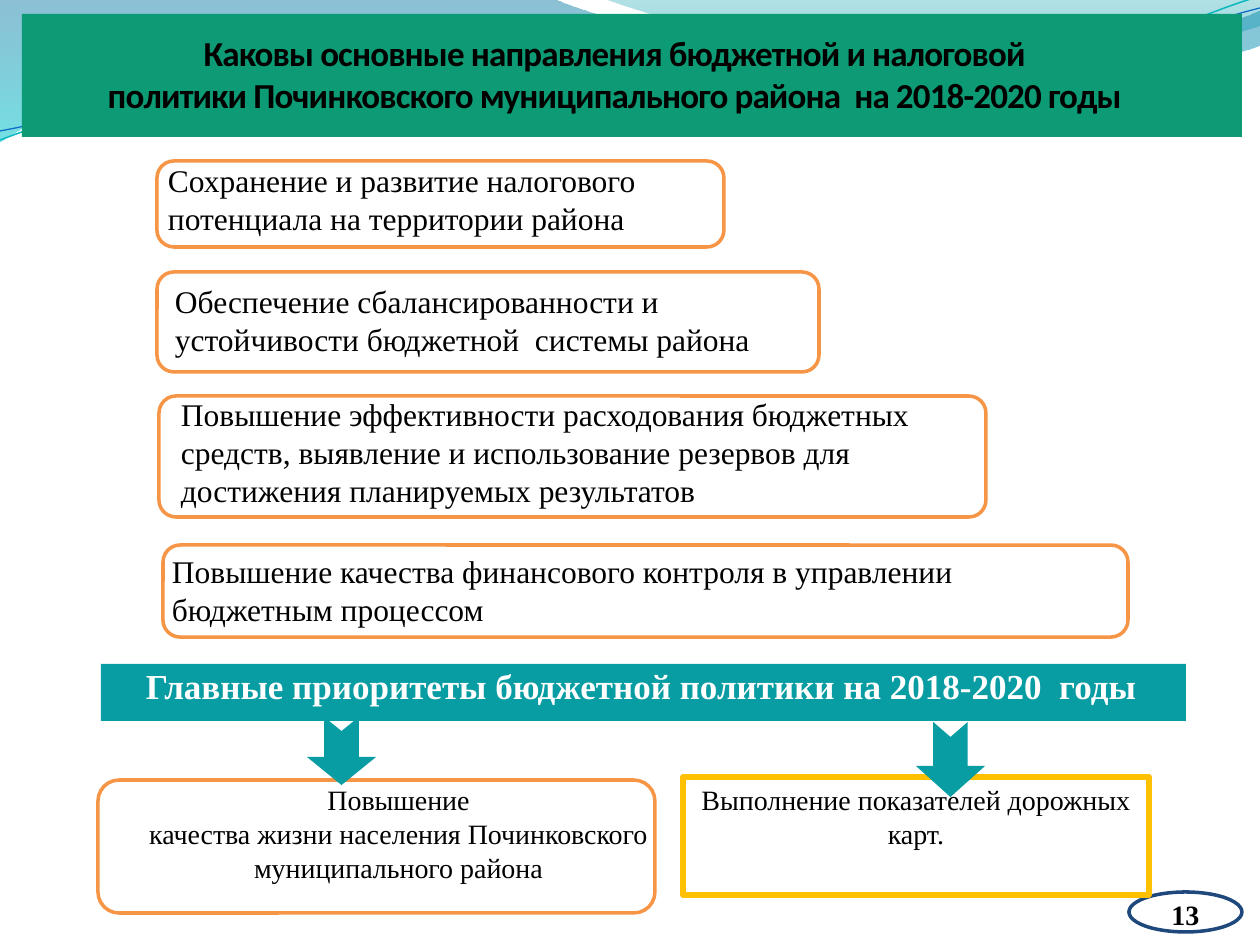
from pptx import Presentation
from pptx.dml.color import RGBColor
from pptx.enum.shapes import MSO_SHAPE as Shape
from pptx.enum.text import MSO_ANCHOR as Anchor, PP_ALIGN as Align
from pptx.oxml.ns import qn
from pptx.util import Pt
from lxml.etree import SubElement

SERIF = "Times New Roman"
TEAL, ORANGE = "089CA3", "F79546"


def px(n):
    return round(n * 914400 / 126)


def color(hex_code):
    return RGBColor.from_string(hex_code)


def style(sp, fill=None, line=None, width=2):
    sp.shadow.inherit = False
    if fill:
        sp.fill.solid()
        sp.fill.fore_color.rgb = color(fill)
    else:
        sp.fill.background()
    if line:
        sp.line.color.rgb = color(line)
        sp.line.width = Pt(width)
    else:
        sp.line.fill.background()
    return sp


def add_preset(s, kind, box, **look):
    return style(s.shapes.add_shape(kind, *map(px, box)), **look)


def write(sp, text, size, font=SERIF, ink="000000", bold=False, align=Align.LEFT,
          anchor=Anchor.TOP, insets=(13, 6, 13, 6)):
    tf = sp.text_frame
    tf.word_wrap = True
    tf.vertical_anchor = anchor
    tf.margin_left, tf.margin_top, tf.margin_right, tf.margin_bottom = map(px, insets)
    tf.text = text
    for p in tf.paragraphs:
        p.alignment = align
        for r in p.runs:
            r.font.size, r.font.name, r.font.bold = Pt(size), font, bold
            r.font.color.rgb = color(ink)
    return tf


def add_text(s, box, text, size, **look):
    return write(s.shapes.add_textbox(*map(px, box)), text, size, **look)


def add_outline(s, points, close=True, **look):
    pts = [(px(x), px(y)) for x, y in points]
    fb = s.shapes.build_freeform(*pts[0])
    fb.add_line_segments(pts[1:], close=close)
    return style(fb.convert_to_shape(), **look)


def curve(start, *segments, steps=16):
    """Points along cubic segments, each given as two controls and an end."""
    pts = [start]
    for b, c, d in segments:
        a = pts[-1]
        for i in range(1, steps + 1):
            t = i / steps
            u = 1 - t
            pts.append(tuple(u**3 * a[k] + 3 * u * u * t * b[k] + 3 * u * t * t * c[k]
                             + t**3 * d[k] for k in (0, 1)))
    return pts


def add_wave(s, points, stops):
    """Wave with a downward gradient; stops are (position, colour, opacity %)."""
    sp = add_outline(s, points)
    sp.fill.gradient()
    sp.fill.gradient_angle = 270
    for stop, (position, hex_code, opacity) in zip(sp.fill.gradient_stops, stops):
        stop.position = position
        stop.color.rgb = color(hex_code)
    for clr, (_, _, opacity) in zip(sp._element.spPr.iter(qn("a:srgbClr")), stops):
        SubElement(clr, qn("a:alpha")).set("val", str(opacity * 1000))


def add_backdrop(s):
    upper = curve((554, -1), ((600, 21), (837, 79), (955, 79)),
                  ((1075, 79), (1207, 33), (1260, 11)))
    lower = curve((1261, 45), ((1239, 55), (1096, 96), (940, 95)),
                  ((784, 94), (481, 35), (324, 43)), ((163, 45), (58, 105), (-1, 142)))
    add_wave(s, [(0, 0)] + upper + lower, [(0, "0074A1", 45), (1, "00C6CF", 55)])
    right = curve((604, -1), ((641, 14), (859, 78), (969, 82)),
                  ((1079, 87), (1211, 40), (1260, 26)))
    add_wave(s, right + [(1260, 0)], [(0, "00A1A9", 30), (0.8, "008BBF", 45)])
    add_outline(s, curve((0, 140), ((60, 117), (199, 72), (349, 66)),
                         ((498, 59), (747, 112), (898, 101)),
                         ((1050, 89), (1182, 19), (1257, -3))),
                close=False, line="0AB8BF", width=0.85)
    add_outline(s, curve((0, 131), ((59, 121), (207, 77), (357, 71)),
                         ((508, 64), (752, 106), (903, 95)),
                         ((1053, 84), (1186, 26), (1260, 8))),
                close=False, line="0F6FC6", width=0.75)


def add_title(s, box):
    x, y, w, h = box
    add_preset(s, Shape.RECTANGLE, box, fill="0C9B74")
    tf = add_text(s, (x - 20, y + 18, w + 5, 84),
                  "Каковы основные направления бюджетной и налоговой\v"
                  "политики Починковского муниципального района  на 2018-2020 годы",
                  20, font="Calibri", bold=True, align=Align.CENTER,
                  anchor=Anchor.BOTTOM, insets=(0, 0, 0, 0))
    for r in tf.paragraphs[0].runs:
        r.font._element.set("spc", "-50")


def add_rounded(s, box, radius):
    sp = add_preset(s, Shape.ROUNDED_RECTANGLE, box, line=ORANGE)
    sp.adjustments[0] = radius / min(box[2:])


def add_direction(s, box, text, dx, dy, text_width):
    x, y, w, h = box
    add_rounded(s, box, 17)
    add_text(s, (x + dx, y + dy, text_width, h), text, 18)


def add_arrow(s, box, notch, head):
    x, y, w, h = box
    mid, left, right = x + w / 2, x + w / 4, x + w * 3 / 4
    add_outline(s, [(left, y), (mid, y + notch), (right, y), (right, y + head),
                    (x + w, y + head), (mid, y + h), (x, y + head), (left, y + head)],
                fill=TEAL)


def add_priorities(s, box):
    x, y, w, h = box
    band = add_preset(s, Shape.RECTANGLE, (x, y, w, 57), fill=TEAL)
    write(band, "Главные приоритеты бюджетной политики на 2018-2020  годы", 20,
          ink="FFFFFF", bold=True, insets=(45, 0, 0, 0))
    add_rounded(s, (x - 3, y + 116, 557, 133), 21)
    add_text(s, (x + 35, y + 113, 525, 152),
             "Повышение\nкачества жизни населения Починковского муниципального района",
             16, align=Align.CENTER)
    goal = add_preset(s, Shape.RECTANGLE, (x + 582, y + 113, 466, 118),
                      line="FFC000", width=3)
    write(goal, "Выполнение показателей дорожных\nкарт.", 16, align=Align.CENTER)
    add_arrow(s, (x + 206, y + 53, 69, 68), notch=14, head=40)
    add_arrow(s, (x + 815, y + 58, 69, 75), notch=15, head=44)


def add_page_number(s, box):
    oval = add_preset(s, Shape.OVAL, box, fill="FFFFFF", line="1F487C")
    write(oval, "13", 16, bold=True, align=Align.CENTER, insets=(0, 0, 0, 0))


DIRECTIONS = [
    ((157, 161, 567, 86), "Сохранение и развитие налогового потенциала на территории района",
     -2, -6, 630),
    ((157, 272, 662, 100), "Обеспечение сбалансированности и устойчивости бюджетной"
     "  системы района", 5, 4, 667),
    ((159, 396, 827, 121), "Повышение эффективности расходования бюджетных средств, выявление"
     " и использование резервов для достижения планируемых результатов", 9, -7, 809),
    ((163, 545, 965, 92), "Повышение качества финансового контроля в управлении"
     " бюджетным процессом", -4, 1, 954),
]


def main():
    prs = Presentation()
    prs.slide_width, prs.slide_height = px(1260), px(945)
    s = prs.slides.add_slide(prs.slide_layouts[6])
    add_backdrop(s)
    add_title(s, (22, 14, 1220, 123))
    for direction in DIRECTIONS:
        add_direction(s, *direction)
    add_page_number(s, (1129, 892, 113, 40))
    add_priorities(s, (101, 664, 1085, 265))
    prs.save("out.pptx")


if __name__ == "__main__":
    main()
